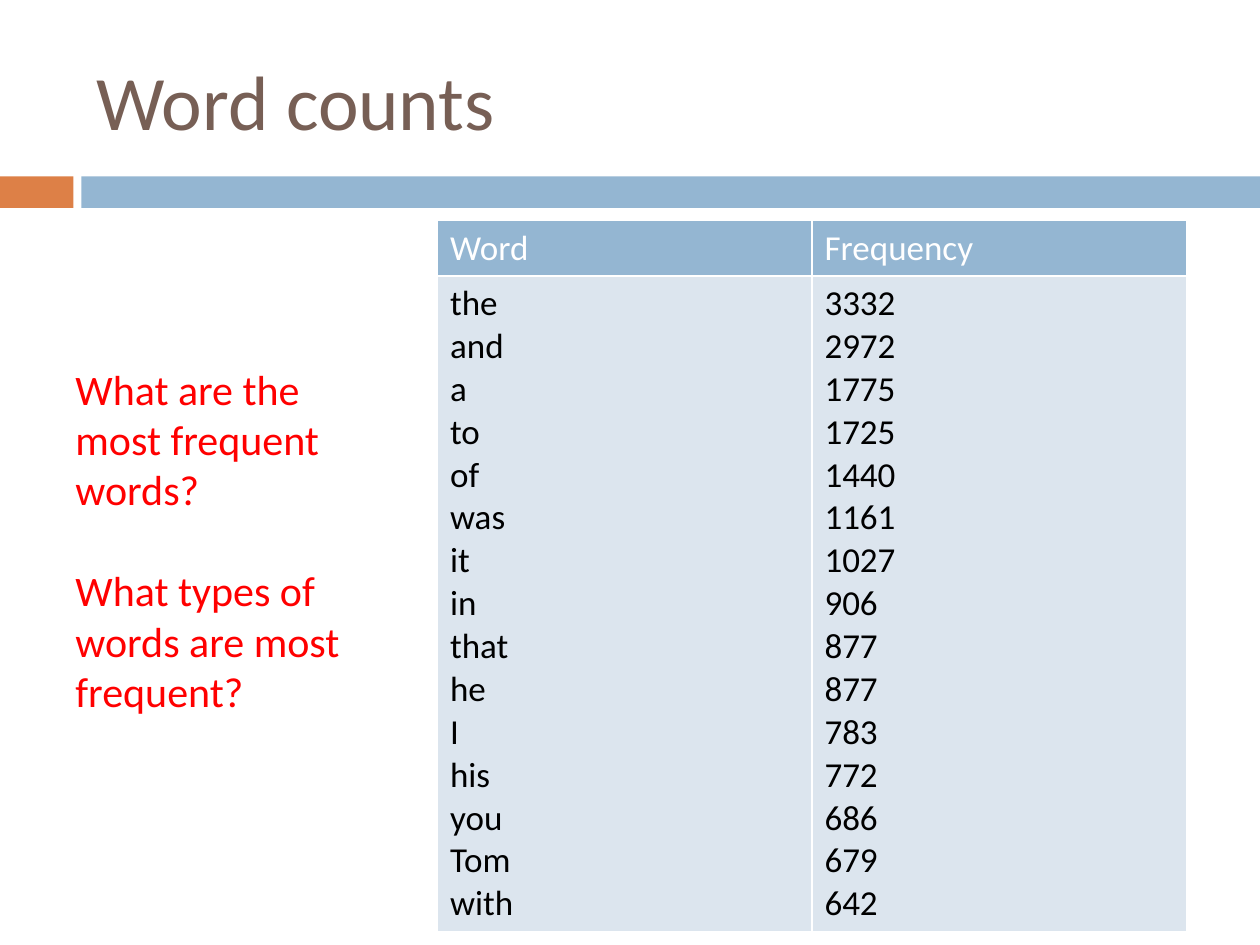
from lxml.etree import SubElement
from pptx import Presentation
from pptx.dml.color import RGBColor
from pptx.enum.shapes import MSO_SHAPE as Preset
from pptx.enum.text import MSO_ANCHOR as Anchor, MSO_AUTO_SIZE as AutoSize, PP_ALIGN as Align
from pptx.oxml.ns import qn
from pptx.util import Pt

COLOURS = {
    "title": "775F55",
    "accent": "DD8047",
    "band": "94B6D2",
    "table_body": "DCE5EE",
    "question": "FF0000",
    "white": "FFFFFF",
    "black": "000000",
}

FREQUENCIES = [
    ("the", 3332), ("and", 2972), ("a", 1775), ("to", 1725), ("of", 1440),
    ("was", 1161), ("it", 1027), ("in", 906), ("that", 877), ("he", 877),
    ("I", 783), ("his", 772), ("you", 686), ("Tom", 679), ("with", 642),
]

QUESTIONS = [
    "What are the most frequent words?",
    "What types of words are most frequent?",
]


class PageBuilder:
    font = "Calibri"

    def __init__(self, page):
        self.page = page

    def colour(self, name):
        return RGBColor.from_string(COLOURS[name])

    def fill(self, item, name):
        item.fill.solid()
        item.fill.fore_color.rgb = self.colour(name)

    def add_lines(self, frame, lines, size, colour, gap=0):
        """Add one paragraph per line, with a gap in points between them."""
        for index, line in enumerate(lines):
            para = frame.add_paragraph() if index else frame.paragraphs[0]
            para.alignment = Align.LEFT
            para.space_before = Pt(gap if index else 0)
            span = para.add_run()
            span.text = line
            span.font.name = self.font
            span.font.size = Pt(size)
            span.font.bold = False
            span.font.color.rgb = self.colour(colour)

    def title(self, text, left, top, width, height):
        box = self.page.shapes.title
        box.left, box.top, box.width, box.height = map(Pt, (left, top, width, height))
        frame = box.text_frame
        frame.vertical_anchor = Anchor.MIDDLE
        frame.auto_size = AutoSize.NONE
        self.add_lines(frame, [text], 44, "title")

    def bar(self, left, top, width, height, colour):
        box = self.page.shapes.add_shape(
            Preset.RECTANGLE, *map(Pt, (left, top, width, height)))
        box.shadow.inherit = False
        box.line.fill.background()
        self.fill(box, colour)

    def text(self, lines, left, top, width, height, size, colour, gap):
        box = self.page.shapes.add_textbox(*map(Pt, (left, top, width, height)))
        box.text_frame.word_wrap = True
        box.text_frame.auto_size = AutoSize.SHAPE_TO_FIT_TEXT
        self.add_lines(box.text_frame, lines, size, colour, gap)

    def cell_borders(self, cell, colour, width):
        props = cell._tc.get_or_add_tcPr()
        for position, side in enumerate(("lnL", "lnR", "lnT", "lnB")):
            line = props.makeelement(qn(f"a:{side}"), {"w": str(Pt(width))})
            solid = SubElement(line, qn("a:solidFill"))
            SubElement(solid, qn("a:srgbClr"), val=COLOURS[colour])
            props.insert(position, line)

    def table(self, headers, columns, left, top, width, row_heights):
        """Draw a header row above one row whose cells list the column values."""
        frame = self.page.shapes.add_table(
            2, len(headers), *map(Pt, (left, top, width, sum(row_heights))))
        grid = frame.table
        for row, height in zip(grid.rows, row_heights):
            row.height = Pt(height)
        rows = [
            ([[header] for header in headers], "band", "white"),
            (columns, "table_body", "black"),
        ]
        for row, (contents, fill, ink) in zip(grid.rows, rows):
            for cell, lines in zip(row.cells, contents):
                self.fill(cell, fill)
                self.cell_borders(cell, "white", 1)
                self.add_lines(cell.text_frame, lines, 20, ink)


def main():
    deck = Presentation()
    deck.slide_width, deck.slide_height = Pt(720), Pt(540)
    builder = PageBuilder(deck.slides.add_slide(deck.slide_layouts[5]))

    builder.bar(0, 100.8, 42, 18, "accent")
    builder.bar(46.5, 100.8, 673.5, 18, "band")
    builder.title("Word counts", 48, 18, 642, 78)

    words = [word for word, _ in FREQUENCIES]
    counts = [str(count) for _, count in FREQUENCIES]
    builder.table(["Word", "Frequency"], [words, counts], 250, 126, 428, (31.5, 374))
    builder.text(QUESTIONS, 36, 204, 192, 211, 24, "question", gap=28.8)

    deck.save("out.pptx")


if __name__ == "__main__":
    main()
